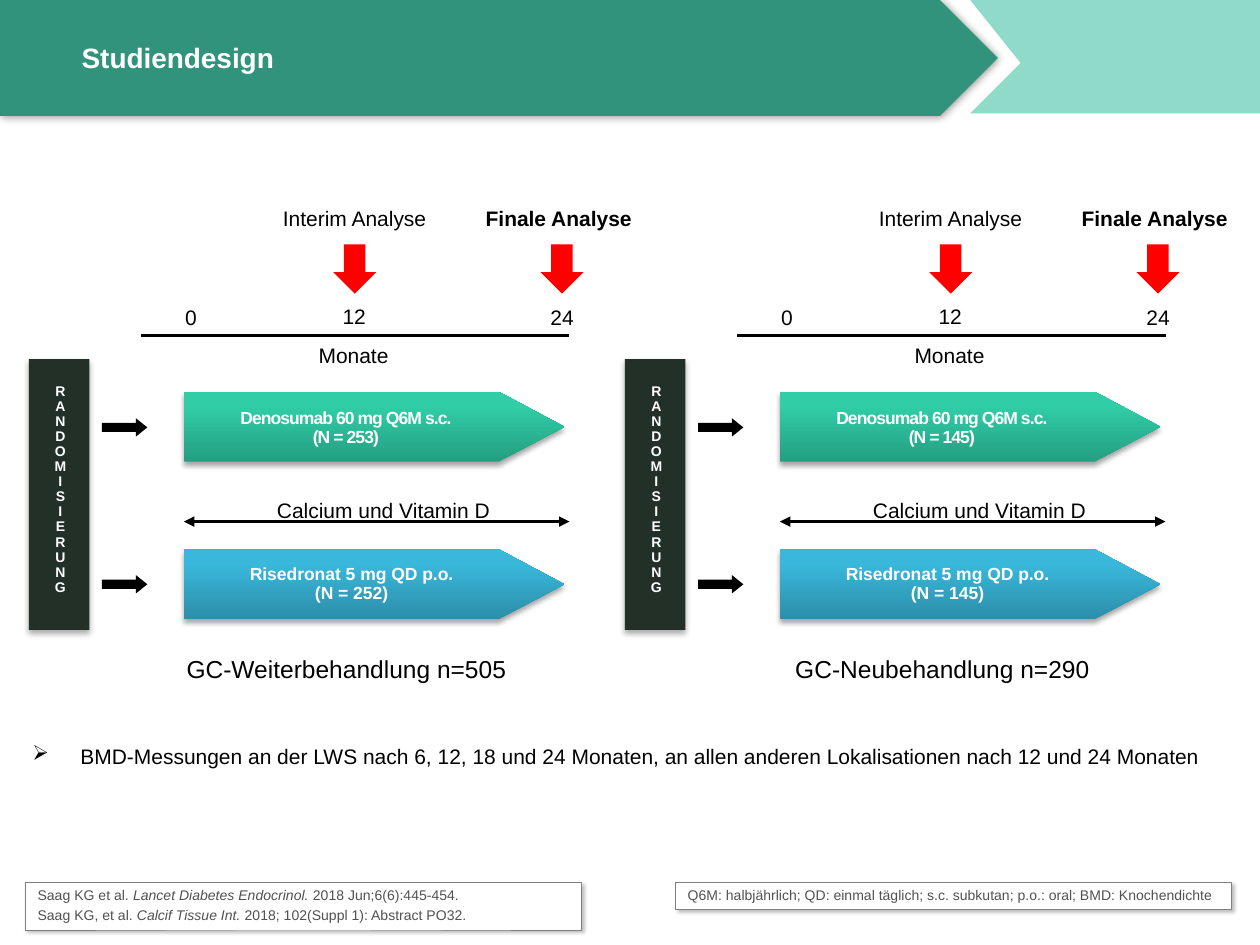
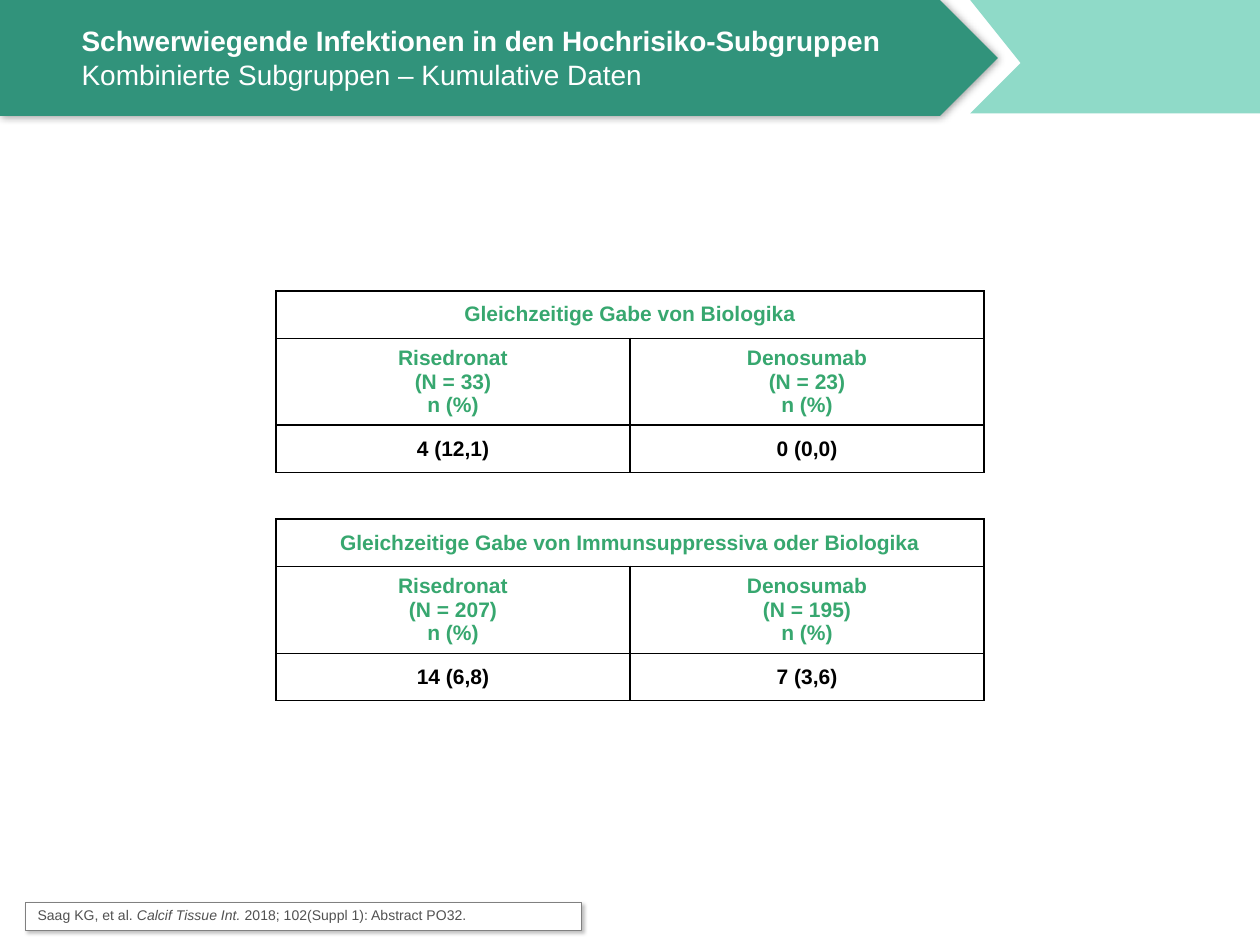
from dataclasses import dataclass
from typing import NamedTuple

from lxml import etree
from pptx import Presentation
from pptx.dml.color import RGBColor
from pptx.enum.shapes import MSO_CONNECTOR, MSO_SHAPE
from pptx.enum.text import MSO_ANCHOR, MSO_AUTO_SIZE, PP_ALIGN
from pptx.oxml.ns import qn
from pptx.util import Inches, Pt

STRAIGHT = MSO_CONNECTOR.STRAIGHT
RECTANGLE, HOME_PLATE = MSO_SHAPE.RECTANGLE, MSO_SHAPE.PENTAGON
RIGHT_ARROW, DOWN_ARROW = MSO_SHAPE.RIGHT_ARROW, MSO_SHAPE.DOWN_ARROW
TOP, MIDDLE, BOTTOM = MSO_ANCHOR.TOP, MSO_ANCHOR.MIDDLE, MSO_ANCHOR.BOTTOM
LEFT, CENTER, JUSTIFY = PP_ALIGN.LEFT, PP_ALIGN.CENTER, PP_ALIGN.JUSTIFY
FIT_SHAPE = MSO_AUTO_SIZE.SHAPE_TO_FIT_TEXT

# Grid of 100 columns by 75 rows with square cells
SLIDE_WIDTH, SLIDE_HEIGHT = Inches(10), Inches(7.5)
CELL = SLIDE_WIDTH // 100
PANEL_PITCH = 47.3

FONT = "Arial"
WHITE = RGBColor(0xFF, 0xFF, 0xFF)
BLACK = RGBColor(0, 0, 0)
RED = RGBColor(0xFF, 0, 0)
BAND_GREEN = RGBColor(0x31, 0x93, 0x7B)
BAND_MINT = RGBColor(0x8F, 0xDA, 0xC8)
DARK_GREEN = RGBColor(0x22, 0x30, 0x28)
TABLE_GREEN = RGBColor(0x37, 0xA7, 0x6F)
NOTE_TEXT = RGBColor(0x51, 0x51, 0x51)
NOTE_LINE = RGBColor(0x80, 0x80, 0x80)
DENOSUMAB_COLORS = (RGBColor(0x25, 0x9E, 0x81), RGBColor(0x30, 0xCD, 0xA7))
RISEDRONAT_COLORS = (RGBColor(0x2C, 0x8E, 0xA9), RGBColor(0x39, 0xB8, 0xDB))


class Box(NamedTuple):
    """Left, top, width and height in grid cells."""
    left: float
    top: float
    width: float
    height: float

    def shifted(self, dx: float) -> "Box":
        return self._replace(left=self.left + dx)

    def emu(self) -> list[int]:
        return [grid(value) for value in self]


class Shadow(NamedTuple):
    alpha: int
    blur: float
    distance: float
    angle: int


class Style(NamedTuple):
    size: float = 12
    color: RGBColor = BLACK
    bold: bool = False
    align: PP_ALIGN = LEFT
    line_spacing: float = 1.0
    tracking: float = 0


@dataclass
class Label:
    text: str
    box: Box
    style: Style = Style()
    anchor: MSO_ANCHOR = TOP
    wrap: bool = True


@dataclass
class Arm:
    drug: str
    top: float
    label_box: Box
    arrow_top: float
    colors: tuple[RGBColor, RGBColor]
    tracking: float = 0


@dataclass
class Panel:
    caption: str
    patients: tuple[int, int]


@dataclass
class RiskTable:
    heading: str
    groups: tuple[str, str]
    values: tuple[str, str]


BAND_SHADOW = Shadow(40, 5, 0, 0)
BAR_SHADOW = Shadow(32, 3.5, 2.2, 90)
ARM_SHADOW = Shadow(35, 3.1, 1.8, 90)
NOTE_SHADOW = Shadow(25, 2, 2, 45)

CENTERED = Style(align=CENTER)
TITLE_STYLE = Style(16, WHITE, True)
NOTE_STYLE = Style(8, NOTE_TEXT, line_spacing=0.9)
BAR_STYLE = Style(8, WHITE, True, CENTER, 0.9)
ARM_STYLE = Style(10, WHITE, True, CENTER, 0.9)
HEAD_STYLE = Style(12, TABLE_GREEN, True, CENTER)
VALUE_STYLE = HEAD_STYLE._replace(color=BLACK)

ARMS = [
    Arm("Denosumab 60 mg Q6M s.c.", 31.1, Box(16.8, 32, 21.3, 4), 33.2,
        DENOSUMAB_COLORS, -0.5),
    Arm("Risedronat 5 mg QD p.o.", 43.6, Box(18.4, 44.4, 19, 4), 45.65,
        RISEDRONAT_COLORS),
]
PANELS = [
    Panel("GC-Weiterbehandlung n=505", (253, 252)),
    Panel("GC-Neubehandlung n=290", (145, 145)),
]
PANEL_LABELS = [
    Label("\n".join("RANDOMISIERUNG"), Box(3.3, 30, 3, 19.2), BAR_STYLE, wrap=False),
    Label("0", Box(13.7, 23.7, 2.9, 3), wrap=False),
    Label("12", Box(26.2, 23.6, 3.9, 3), wrap=False),
    Label("24", Box(42.7, 23.7, 3.9, 3), wrap=False),
    Label("Monate", Box(24.3, 26.7, 8.1, 3), wrap=False),
    Label("Calcium und Vitamin D", Box(21, 39, 19, 3), wrap=False),
    Label("Interim Analyse", Box(18.5, 15.8, 19.3, 3), CENTERED),
    Label("Finale Analyse", Box(34.7, 15.8, 19.3, 3), CENTERED._replace(bold=True)),
]
ANALYSIS_ARROWS = (26.45, 42.9)

RISK_TABLES = [
    RiskTable("Gleichzeitige Gabe von Biologika",
              ("Risedronat\n(N = 33)\nn (%)", "Denosumab\n(N = 23)\nn (%)"),
              ("4 (12,1)", "0 (0,0)")),
    RiskTable("Gleichzeitige Gabe von Immunsuppressiva oder Biologika",
              ("Risedronat\n(N = 207)\nn (%)", "Denosumab\n(N = 195)\nn (%)"),
              ("14 (6,8)", "7 (3,6)")),
]
TABLE_BOX, TABLE_PITCH = Box(21.9, 23.1, 56.2, 14.4), 18.1
TABLE_ROWS = (3.75, 6.9, 3.75)

# Every second piece of a reference is set in italics
LANCET_REF = ("Saag KG et al. ", "Lancet Diabetes Endocrinol.", " 2018 Jun;6(6):445-454.")
CALCIF_REF = ("Saag KG, et al. ", "Calcif Tissue Int.",
              " 2018; 102(Suppl 1): Abstract PO32.")
ABBREVIATIONS = ("Q6M: halbjährlich; QD: einmal täglich; s.c. subkutan; "
                 "p.o.: oral; BMD: Knochendichte",)


def grid(cells: float) -> int:
    return round(cells * CELL)


def sub(parent, tag: str, **attributes):
    return etree.SubElement(parent, qn(tag), {k: str(v) for k, v in attributes.items()})


def add_shadow(shape, shadow: Shadow) -> None:
    effects = shape._element.spPr.find(qn("a:effectLst"))
    outer = sub(effects, "a:outerShdw", blurRad=Pt(shadow.blur),
                dist=Pt(shadow.distance), dir=shadow.angle * 60000,
                algn="ctr", rotWithShape=0)
    sub(sub(outer, "a:srgbClr", val="000000"), "a:alpha", val=shadow.alpha * 1000)


def paint(shape, color: RGBColor) -> None:
    shape.fill.solid()
    shape.fill.fore_color.rgb = color
    shape.line.fill.background()
    shape.shadow.inherit = False


def add_block(slide, kind, box: Box, color: RGBColor, shadow: Shadow | None = None,
              adjustments: tuple[float, ...] = ()):
    block = slide.shapes.add_shape(kind, *box.emu())
    for index, value in enumerate(adjustments):
        block.adjustments[index] = value
    paint(block, color)
    if shadow:
        add_shadow(block, shadow)
    return block


def format_text(frame, style: Style) -> None:
    for paragraph in frame.paragraphs:
        paragraph.alignment = style.align
        paragraph.line_spacing = style.line_spacing
        for run in paragraph.runs:
            run.font.name = FONT
            run.font.size = Pt(style.size)
            run.font.bold = style.bold
            run.font.color.rgb = style.color
            if style.tracking:
                run._r.get_or_add_rPr().set("spc", str(round(style.tracking * 100)))


def add_label(slide, label: Label, dx: float = 0):
    frame = slide.shapes.add_textbox(*label.box.shifted(dx).emu()).text_frame
    frame.text = label.text
    frame.word_wrap = label.wrap
    frame.vertical_anchor = label.anchor
    format_text(frame, label.style)
    return frame


def add_line(slide, left: float, right: float, y: float, arrows: bool = False) -> None:
    line = slide.shapes.add_connector(STRAIGHT, grid(left), grid(y), grid(right), grid(y))
    line.line.color.rgb = BLACK
    line.line.width = Pt(1.5)
    properties = line._element.spPr
    if arrows:
        for end in ("a:headEnd", "a:tailEnd"):
            sub(properties.find(qn("a:ln")), end, type="triangle")
    sub(properties, "a:effectLst")


def add_header(slide, title: str) -> None:
    outline = slide.shapes.build_freeform(76.7, 0, scale=float(CELL))
    outline.add_line_segments([(100, 0), (100, 9.2), (76.7, 9.2), (81.2, 4.6)])
    paint(outline.convert_to_shape(), BAND_MINT)
    add_block(slide, HOME_PLATE, Box(0, 0, 79.2, 9.2), BAND_GREEN, BAND_SHADOW)
    frame = add_label(slide, Label(title, Box(5.5, 1.2, 67, 6.7), TITLE_STYLE, MIDDLE))
    for subtitle in frame.paragraphs[1:]:
        subtitle.runs[0].font.bold = False


def add_note(slide, box: Box, *references: tuple[str, ...]) -> None:
    note = add_block(slide, RECTANGLE, box, WHITE, NOTE_SHADOW)
    note.line.color.rgb = NOTE_LINE
    note.line.width = Pt(0.25)
    frame = note.text_frame
    frame.word_wrap = True
    frame.vertical_anchor = BOTTOM
    frame.auto_size = FIT_SHAPE
    for number, pieces in enumerate(references):
        paragraph = frame.add_paragraph() if number else frame.paragraphs[0]
        paragraph.space_before = Pt(3 if number else 0)
        for index, piece in enumerate(pieces):
            run = paragraph.add_run()
            run.text = piece
            run.font.italic = index % 2 == 1
    format_text(frame, NOTE_STYLE)


def add_arm(slide, arm: Arm, patients: int, dx: float) -> None:
    plate = add_block(slide, HOME_PLATE, Box(14.6 + dx, arm.top, 30.2, 5.55),
                      arm.colors[0], ARM_SHADOW, (0.94,))
    plate.fill.gradient()
    plate.fill.gradient_angle = 90
    for stop, color, position in zip(plate.fill.gradient_stops, arm.colors, (0, 0.8)):
        stop.color.rgb = color
        stop.position = position
    add_block(slide, RIGHT_ARROW, Box(8.1 + dx, arm.arrow_top, 3.6, 1.45), BLACK,
              adjustments=(0.5, 0.62))
    style = ARM_STYLE._replace(tracking=arm.tracking)
    add_label(slide, Label(f"{arm.drug}\n(N = {patients})", arm.label_box, style, MIDDLE), dx)


def add_panel(slide, panel: Panel, dx: float) -> None:
    add_block(slide, RECTANGLE, Box(2.3 + dx, 28.5, 4.8, 21.5), DARK_GREEN, BAR_SHADOW)
    for arm, patients in zip(ARMS, panel.patients):
        add_arm(slide, arm, patients, dx)
    add_line(slide, 11.2 + dx, 45.2 + dx, 26.65)
    add_line(slide, 14.6 + dx, 45.2 + dx, 41.4, arrows=True)
    for left in ANALYSIS_ARROWS:
        add_block(slide, DOWN_ARROW, Box(left + dx, 19.4, 3.4, 3.9), RED)
    for label in PANEL_LABELS:
        add_label(slide, label, dx)
    caption_style = CENTERED._replace(size=14)
    add_label(slide, Label(panel.caption, Box(5.8, 51.4, 43.4, 3.4), caption_style), dx)


def add_bullet(slide, text: str) -> None:
    style = Style(align=JUSTIFY, line_spacing=1.15)
    paragraph = add_label(slide, Label(text, Box(1.6, 58.2, 98.4, 3.1), style)).paragraphs[0]
    paragraph.space_before = Pt(5)
    properties = paragraph._p.get_or_add_pPr()
    properties.set("marL", str(grid(3.8)))
    properties.set("indent", str(-grid(3.8)))
    sub(properties, "a:buChar", char="➢")


def add_borders(cell) -> None:
    properties = cell._tc.get_or_add_tcPr()
    for index, side in enumerate(("a:lnL", "a:lnR", "a:lnT", "a:lnB")):
        border = sub(properties, side, w=Pt(1))
        sub(sub(border, "a:solidFill"), "a:srgbClr", val=str(BLACK))
        properties.insert(index, border)


def add_risk_table(slide, risk: RiskTable, box: Box) -> None:
    table = slide.shapes.add_table(3, 2, *box.emu()).table
    table.first_row = table.horz_banding = False
    for column in table.columns:
        column.width = grid(box.width / 2)
    for row, height in zip(table.rows, TABLE_ROWS):
        row.height = grid(height)
    table.cell(0, 0).merge(table.cell(0, 1))
    for r, texts in enumerate(((risk.heading, ""), risk.groups, risk.values)):
        for c, text in enumerate(texts):
            cell = table.cell(r, c)
            cell.fill.background()
            add_borders(cell)
            cell.vertical_anchor = MIDDLE
            cell.margin_top = cell.margin_bottom = grid(0.4)
            if text:
                cell.text_frame.text = text
                format_text(cell.text_frame, VALUE_STYLE if r == 2 else HEAD_STYLE)


def main() -> None:
    deck = Presentation()
    deck.slide_width, deck.slide_height = SLIDE_WIDTH, SLIDE_HEIGHT
    blank = deck.slide_layouts[6]

    # Study design
    design = deck.slides.add_slide(blank)
    add_header(design, "Studiendesign")
    for number, panel in enumerate(PANELS):
        add_panel(design, panel, number * PANEL_PITCH)
    add_bullet(design, "BMD-Messungen an der LWS nach 6, 12, 18 und 24 Monaten, "
                       "an allen anderen Lokalisationen nach 12 und 24 Monaten")
    add_note(design, Box(2, 70, 44.1, 3.8), LANCET_REF, CALCIF_REF)
    add_note(design, Box(53.6, 70, 44.1, 2.2), ABBREVIATIONS)

    # Serious infections
    infections = deck.slides.add_slide(blank)
    add_header(infections, "Schwerwiegende Infektionen in den Hochrisiko-Subgruppen\n"
                           "Kombinierte Subgruppen – Kumulative Daten")
    for number, risk in enumerate(RISK_TABLES):
        top = TABLE_BOX.top + number * TABLE_PITCH
        add_risk_table(infections, risk, TABLE_BOX._replace(top=top))
    add_note(infections, Box(2, 71.6, 44.1, 2.2), CALCIF_REF)

    deck.save("out.pptx")


if __name__ == "__main__":
    main()
